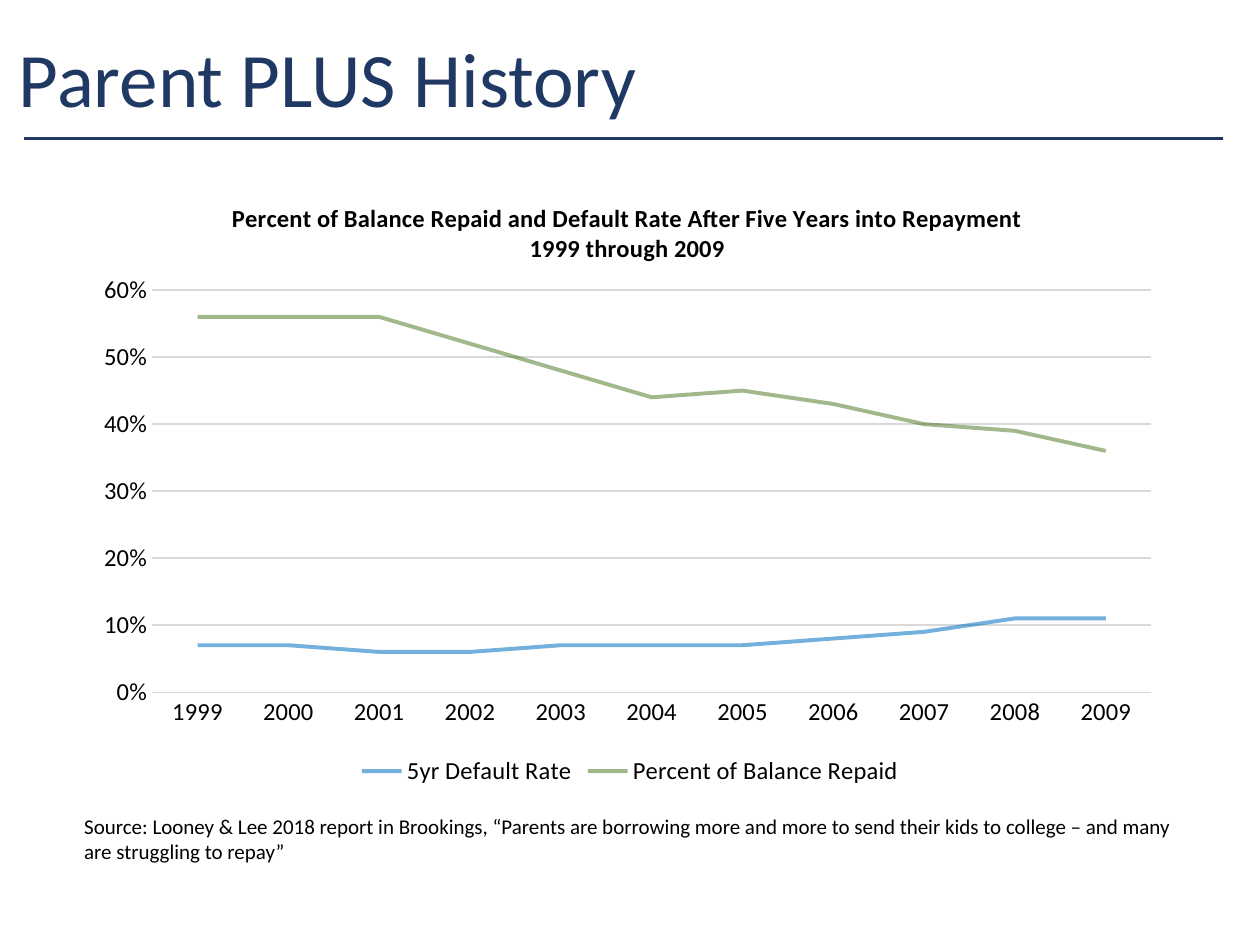
from dataclasses import dataclass

import pptx
import pptx.chart.data
import pptx.dml.color
import pptx.enum.chart
import pptx.enum.shapes
import pptx.enum.text
import pptx.oxml
import pptx.oxml.ns
import pptx.util

W, H = 10, 7.5
SERIES = [
    ("5yr Default Rate", "0070C0", 55,
     [0.07, 0.07, 0.06, 0.06, 0.07, 0.07, 0.07, 0.08, 0.09, 0.11, 0.11]),
    ("Percent of Balance Repaid", "336600", 45,
     [0.56, 0.56, 0.56, 0.52, 0.48, 0.44, 0.45, 0.43, 0.4, 0.39, 0.36]),
]
YEARS = [str(year) for year in range(1999, 2010)]
CHART_TITLE = [
    "Percent of Balance Repaid and Default Rate After Five Years into Repayment",
    "1999 through 2009",
]
SOURCE = ("Source: Looney & Lee 2018 report in Brookings, “Parents are borrowing more and more "
          "to send their kids to college – and many are struggling to repay”")


@dataclass(frozen=True)
class Theme:
    font: str = "Calibri"
    navy: str = "203864"
    text: str = "000000"
    grid: str = "D9D9D9"
    title_size: int = 44
    chart_size: int = 14
    source_size: int = 12


THEME = Theme()


def rgb(value):
    return pptx.dml.color.RGBColor.from_string(value)


def box(left, top, width, height):
    return [pptx.util.Inches(v) for v in (left, top, width, height)]


def style_font(font, size, color=THEME.text, bold=False):
    font.name = THEME.font
    font.size = pptx.util.Pt(size)
    font.bold = bold
    font.color.rgb = rgb(color)


def style_line(line, color, width):
    line.color.rgb = rgb(color)
    line.width = pptx.util.Pt(width)


def add_run(p, text, size, color=THEME.text, bold=False):
    r = p.add_run()
    r.text = text
    style_font(r.font, size, color, bold)


def add_title(s, text):
    title = s.shapes.title
    title.left, title.top, title.width, title.height = box(0.05, 0.22, 8.62, 0.87)
    tf = title.text_frame
    tf.vertical_anchor = pptx.enum.text.MSO_ANCHOR.MIDDLE
    p = tf.paragraphs[0]
    p.alignment = pptx.enum.text.PP_ALIGN.LEFT
    p.line_spacing = 0.9
    add_run(p, text, THEME.title_size, THEME.navy)


def add_rule(s, y):
    ends = [pptx.util.Inches(v) for v in (9.71, y, 0.19, y)]
    rule = s.shapes.add_connector(pptx.enum.shapes.MSO_CONNECTOR.STRAIGHT, *ends)
    style_line(rule.line, THEME.navy, 1.75)
    pptx.oxml.ns.qn("a:effectLst")
    rule.element.spPr.append(
        rule.element.makeelement(pptx.oxml.ns.qn("a:effectLst"), {}))


def add_source(s, text):
    tf = s.shapes.add_textbox(*box(0.57, 6.41, 8.87, 0.5)).text_frame
    tf.word_wrap = True
    add_run(tf.paragraphs[0], text, THEME.source_size)


def place(element, index, **shares):
    qn = pptx.oxml.ns.qn
    for old in element.findall(qn("c:layout")):
        element.remove(old)
    layout = element.makeelement(qn("c:layout"), {})
    manual = layout.makeelement(qn("c:manualLayout"), {})
    layout.append(manual)
    settings = {"xMode": "edge", "yMode": "edge", **shares}
    if "w" in shares:
        settings = {"layoutTarget": "inner", **settings}
    for name, value in settings.items():
        manual.append(manual.makeelement(qn(f"c:{name}"), {"val": str(value)}))
    element.insert(index, layout)


def set_opacity(line_series, percent):
    for color in line_series.format.line._ln.iter(pptx.oxml.ns.qn("a:srgbClr")):
        color.append(color.makeelement(
            pptx.oxml.ns.qn("a:alpha"), {"val": str(percent * 1000)}))


def format_axes(chart):
    none = pptx.enum.chart.XL_TICK_MARK.NONE
    for axis in (chart.category_axis, chart.value_axis):
        axis.major_tick_mark = axis.minor_tick_mark = none
        style_font(axis.tick_labels.font, THEME.chart_size)
    style_line(chart.category_axis.format.line, THEME.grid, 0.75)
    values = chart.value_axis
    values.minimum_scale, values.maximum_scale, values.major_unit = 0, 0.6, 0.1
    values.format.line.fill.background()
    style_line(values.major_gridlines.format.line, THEME.grid, 0.75)
    values.tick_labels.number_format = "0%"
    values.tick_labels.number_format_is_linked = False


def add_chart_title(chart, lines):
    chart.has_title = True
    tf = chart.chart_title.text_frame
    for i, text in enumerate(lines):
        p = tf.add_paragraph() if i else tf.paragraphs[0]
        add_run(p, text, THEME.chart_size, bold=True)
    place(chart.chart_title._element, 1, x=0.13, y=0.04)


def add_line_chart(s):
    data = pptx.chart.data.CategoryChartData(number_format="0%")
    data.categories = YEARS
    for name, _, _, values in SERIES:
        data.add_series(name, values)
    chart = s.shapes.add_chart(
        pptx.enum.chart.XL_CHART_TYPE.LINE, *box(0.69, 1.37, 8.62, 4.91), data).chart
    style_font(chart.font, 10)
    add_chart_title(chart, CHART_TITLE)
    format_axes(chart)
    chart.has_legend = True
    chart.legend.position = pptx.enum.chart.XL_LEGEND_POSITION.BOTTOM
    chart.legend.include_in_layout = False
    style_font(chart.legend.font, THEME.chart_size)
    plot = chart.plots[0]
    plot.vary_by_categories = False
    for line_series, (_, color, opacity, _) in zip(plot.series, SERIES):
        line_series.smooth = False
        line_series.marker.style = pptx.enum.chart.XL_MARKER_STYLE.NONE
        style_line(line_series.format.line, color, 2.25)
        set_opacity(line_series, opacity)
    plot_area = next(chart.element.iter(pptx.oxml.ns.qn("c:plotArea")))
    place(plot_area, 0, x=0.06, y=0.19, w=0.92, h=0.65)


def main():
    prs = pptx.Presentation()
    prs.slide_width, prs.slide_height = pptx.util.Inches(W), pptx.util.Inches(H)
    s = prs.slides.add_slide(prs.slide_layouts[5])
    add_rule(s, 1.1)
    add_title(s, "Parent PLUS History")
    add_source(s, SOURCE)
    add_line_chart(s)
    prs.save("out.pptx")


if __name__ == "__main__":
    main()
